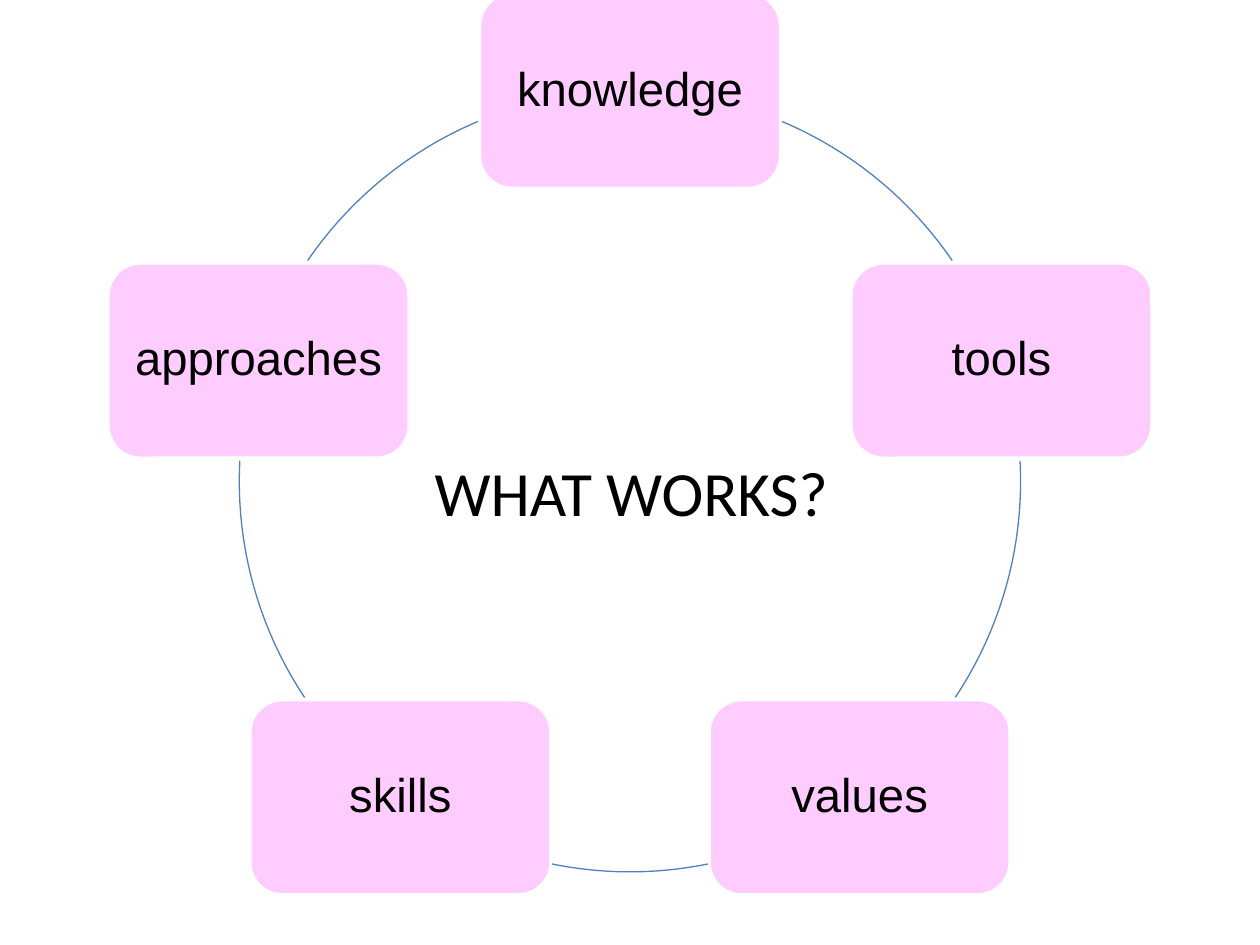
from math import cos, radians, sin

from pptx import Presentation
from pptx import util as u
from pptx.dml.color import RGBColor
from pptx.enum import shapes, text

# Content, clockwise from the top
TITLE = "WHAT WORKS?"
TOPICS = ["knowledge", "tools", "values", "skills", "approaches"]
# Start and end of each arc, in degrees clockwise from the right
ARCS = [(-67.1, -34.4), (-3, 33.6), (78.5, 101.5), (146.4, 183), (214.4, 247.1)]

# Geometry in inches
CENTER_X, CENTER_Y, RADIUS = 5.0, 3.82, 3.1
BOX_WIDTH, BOX_HEIGHT = 2.39, 1.55
BOX_INSET = 0.11
ARC_UNITS_PER_DEGREE = 0.6  # adjustment values count 60000 per degree, over 100000

TOPIC_FONT = {"name": "Arial", "size": u.Pt(27)}
TITLE_FONT = {"name": "Calibri", "size": u.Pt(36)}


def color(value):
    return RGBColor.from_string(value)


def add_preset(kind, left, top, width, height, line_color, line_width):
    shape = slide.shapes.add_shape(kind, *map(u.Inches, (left, top, width, height)))
    shape.shadow.inherit = False
    shape.line.color.rgb = color(line_color)
    shape.line.width = u.Pt(line_width)
    return shape


def write(shape, words, font_format, alignment, frame_format):
    frame = shape.text_frame
    for name, value in frame_format.items():
        setattr(frame, name, value)
    paragraph = frame.paragraphs[0]
    paragraph.alignment = alignment
    run = paragraph.add_run()
    run.text = words
    run.font.color.rgb = color("000000")
    for name, value in font_format.items():
        setattr(run.font, name, value)


presentation = Presentation()
presentation.slide_width, presentation.slide_height = u.Inches(10), u.Inches(7.5)
slide = presentation.slides.add_slide(presentation.slide_layouts[6])

# Topic boxes evenly spaced on the circle
box_frame = {"word_wrap": True, "vertical_anchor": text.MSO_ANCHOR.MIDDLE}
for side in ("left", "top", "right", "bottom"):
    box_frame[f"margin_{side}"] = u.Inches(BOX_INSET)

for index, topic in enumerate(TOPICS):
    angle = radians(index * 360 / len(TOPICS) - 90)
    box = add_preset(
        shapes.MSO_SHAPE.ROUNDED_RECTANGLE,
        CENTER_X + RADIUS * cos(angle) - BOX_WIDTH / 2,
        CENTER_Y + RADIUS * sin(angle) - BOX_HEIGHT / 2,
        BOX_WIDTH, BOX_HEIGHT, "FFFFFF", 2)
    box.fill.solid()
    box.fill.fore_color.rgb = color("FFCCFF")
    write(box, topic, TOPIC_FONT, text.PP_ALIGN.CENTER, box_frame)
    box.text_frame.paragraphs[0].line_spacing = 0.9

# Arcs in the gaps between the boxes
for angles in ARCS:
    arc = add_preset(
        shapes.MSO_SHAPE.ARC, CENTER_X - RADIUS, CENTER_Y - RADIUS,
        2 * RADIUS, 2 * RADIUS, "4F81BD", 0.75)
    arc.fill.background()
    for position, degrees in enumerate(angles):
        arc.adjustments[position] = degrees % 360 * ARC_UNITS_PER_DEGREE

# Question in the middle
title = slide.shapes.add_textbox(*map(u.Inches, (3.35, 3.55, 4.01, 0.7)))
write(title, TITLE, TITLE_FONT, text.PP_ALIGN.LEFT, {"word_wrap": True})

presentation.save("out.pptx")
